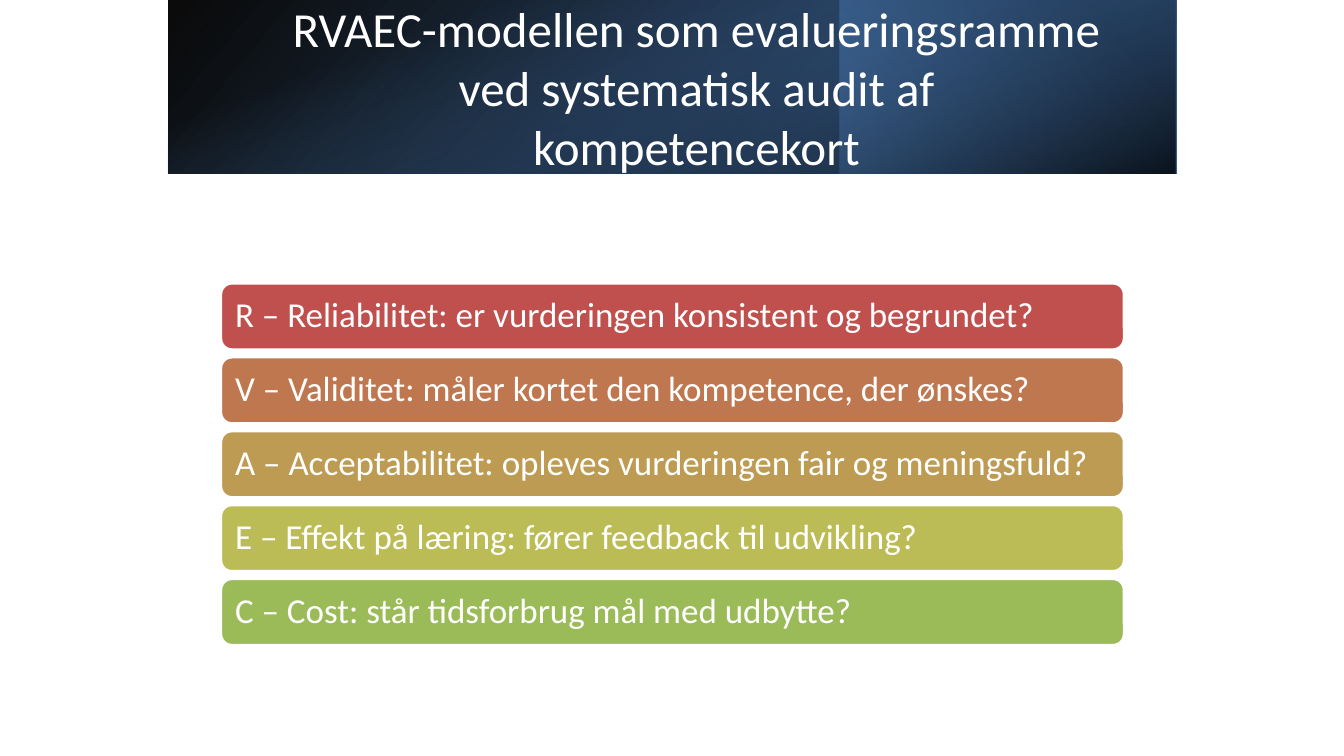
from pptx import Presentation
from pptx.dml.color import RGBColor
from pptx.enum.shapes import MSO_SHAPE
from pptx.enum.text import MSO_ANCHOR, PP_ALIGN
from pptx.oxml.ns import qn
from pptx.util import Inches, Pt
from lxml.etree import SubElement

COLORS = {
    "white": "FFFFFF", "black": "000000", "steel": "376092",
    "navy": "254061", "blue": "4F81BD",
    "red": "C0504D", "rust": "BF7750", "ochre": "BD9B53",
    "lime": "BCBC56", "green": "9BBB59",
}
FONT = "Calibri"
TITLE = "RVAEC-modellen som evalueringsramme ved systematisk audit af kompetencekort"
CRITERIA = [
    ("R – Reliabilitet: er vurderingen konsistent og begrundet?", "red"),
    ("V – Validitet: måler kortet den kompetence, der ønskes?", "rust"),
    ("A – Acceptabilitet: opleves vurderingen fair og meningsfuld?", "ochre"),
    ("E – Effekt på læring: fører feedback til udvikling?", "lime"),
    ("C – Cost: står tidsforbrug mål med udbytte?", "green"),
]
# box, rotation, mirrored, clockwise gradient angle, stops (position %, colour, opacity %)
BANNER_LAYERS = [
    ((1.67, 0, 10, 1.72), 0, True, 140, [(0, "black", 96), (100, "steel", 100)]),
    ((8.33, 0, 3.33, 1.72), 180, False, 320, [(19, "navy", 68), (100, "blue", 79)]),
    ((5.8, -4.14, 1.72, 10), 90, False, 340, [(23, "blue", 0), (99, "black", 74)]),
]
BAR_LEFT, BAR_TOP, BAR_WIDTH, BAR_HEIGHT, BAR_PITCH = 2.19, 2.81, 8.96, 0.66, 0.733


def rgb(name):
    return RGBColor.from_string(COLORS[name])


def format_text(paragraph, size, align):
    paragraph.alignment = align
    paragraph.font.name = FONT
    paragraph.font.size = Pt(size)
    paragraph.font.color.rgb = rgb("white")


def add_banner_layer(slide, box, rotation, mirrored, angle, stops):
    layer = slide.shapes.add_shape(MSO_SHAPE.RECTANGLE, *map(Inches, box))
    layer.shadow.inherit = False
    layer.line.fill.background()
    layer.rotation = rotation
    properties = layer._element.spPr
    if mirrored:
        properties.find(qn("a:xfrm")).set("flipH", "1")
    layer.fill.gradient()
    layer.fill.gradient_angle = 360 - angle
    for stop, (position, color, _) in zip(layer.fill.gradient_stops, stops):
        stop.position = position / 100
        stop.color.rgb = rgb(color)
    for color_element, (_, _, opacity) in zip(properties.iter(qn("a:srgbClr")), stops):
        SubElement(color_element, qn("a:alpha")).set("val", str(opacity * 1000))


def add_criterion(slide, row, text, color):
    bar = slide.shapes.add_shape(
        MSO_SHAPE.ROUNDED_RECTANGLE, Inches(BAR_LEFT), Inches(BAR_TOP + row * BAR_PITCH),
        Inches(BAR_WIDTH), Inches(BAR_HEIGHT))
    bar.shadow.inherit = False
    bar.fill.solid()
    bar.fill.fore_color.rgb = rgb(color)
    bar.line.color.rgb = rgb("white")
    bar.line.width = Pt(2)
    frame = bar.text_frame
    frame.word_wrap = True
    frame.vertical_anchor = MSO_ANCHOR.MIDDLE
    frame.margin_left = frame.margin_right = Inches(0.11)
    frame.text = text
    frame.paragraphs[0].line_spacing = 0.9
    format_text(frame.paragraphs[0], 25, PP_ALIGN.LEFT)


def main():
    deck = Presentation()
    deck.slide_width, deck.slide_height = Inches(13.33), Inches(7.5)
    slide = deck.slides.add_slide(deck.slide_layouts[5])

    for layer in BANNER_LAYERS:
        add_banner_layer(slide, *layer)

    title = slide.shapes.title
    title.left, title.top, title.width, title.height = map(Inches, (2.79, 0.38, 8.24, 0.96))
    title.text_frame.text = TITLE
    title.text_frame.word_wrap = True
    title.text_frame.vertical_anchor = MSO_ANCHOR.MIDDLE
    format_text(title.text_frame.paragraphs[0], 35, PP_ALIGN.CENTER)
    slide.shapes._spTree.append(title._element)  # bring the title in front of the banner

    for row, (text, color) in enumerate(CRITERIA):
        add_criterion(slide, row, text, color)

    deck.save("out.pptx")


if __name__ == "__main__":
    main()
